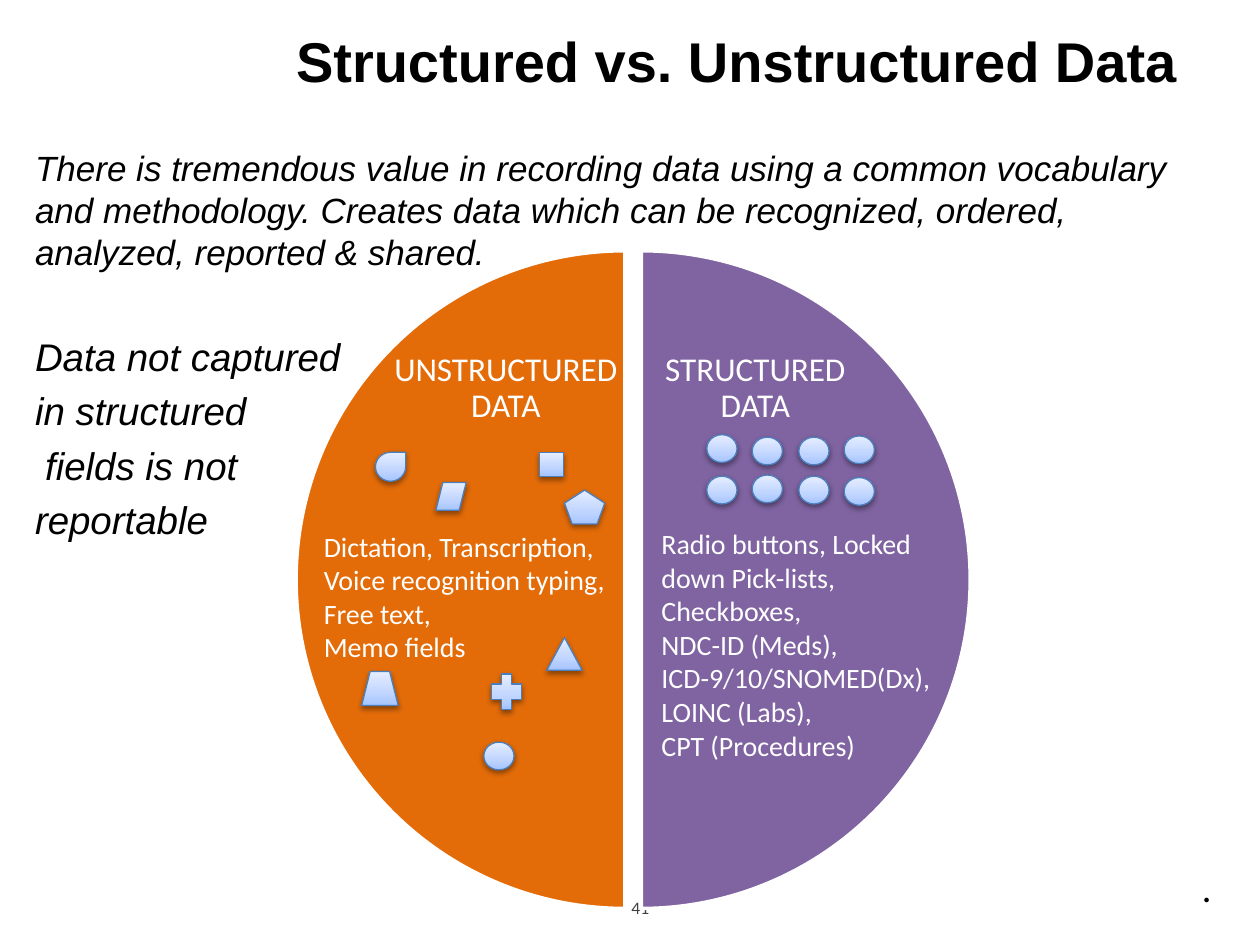
from copy import deepcopy

from lxml.etree import SubElement
from pptx import Presentation
from pptx.dml.color import RGBColor
from pptx.enum.shapes import MSO_SHAPE as Shape
from pptx.enum.text import MSO_ANCHOR as Anchor, PP_ALIGN as Align
from pptx.oxml.ns import qn
from pptx.util import Pt

PX = 9144  # 100 px to the inch
COLORS = {
    "black": "000000", "white": "FFFFFF", "number": "404040",
    "structured": "8064A2", "unstructured": "E36C09", "outline": "4B7EBC",
    "low": "A4C4FF", "middle": "BFD4FF", "high": "E6EEFF",
}


def rgb(name):
    return RGBColor.from_string(COLORS[name])


def write(text, at, holder=None, size=16, font="Calibri", color="white", bold=False,
          italic=False, align=Align.LEFT, anchor=Anchor.TOP, inset=(10, 5),
          spacing=None, before=0):
    """Put lines of text in a new box, or in the holder given, at (x, y, w, h) px."""
    left, top, width, height = (n * PX for n in at)
    if holder is None:
        holder = slide.shapes.add_textbox(left, top, width, height)
    holder.left, holder.top, holder.width, holder.height = left, top, width, height
    frame = holder.text_frame
    frame.word_wrap = True
    frame.vertical_anchor = anchor
    frame.margin_left = frame.margin_right = inset[0] * PX
    frame.margin_top = frame.margin_bottom = inset[1] * PX
    frame.text = text
    for index, paragraph in enumerate(frame.paragraphs):
        paragraph.alignment = align
        paragraph.line_spacing = spacing
        paragraph.space_before = Pt(before if index else 0)
        for run in paragraph.runs:
            run.font.size = Pt(size)
            run.font.name = font
            run.font.bold = bold
            run.font.italic = italic
            run.font.color.rgb = rgb(color)
    return frame


prs = Presentation()
prs.slide_width, prs.slide_height = 1000 * PX, 750 * PX
slide = prs.slides.add_slide(prs.slide_layouts[5])

write("Structured vs. Unstructured Data", (225, 13, 746, 70), slide.shapes.title,
      size=32, font="Arial", color="black", bold=True, anchor=Anchor.MIDDLE)

# Statements beside and above the circle
write("There is tremendous value in recording data using a common vocabulary and "
      "methodology. Creates data which can be recognized, ordered, analyzed, "
      "reported & shared.",
      (18, 111, 954, 110), size=20, font="Arial", color="black", italic=True,
      spacing=Pt(24))
warning = write("Data not captured\nin structured\nfields is not\nreportable",
                (18, 260, 300, 182), size=22, font="Arial", color="black",
                italic=True, spacing=Pt(26), before=5)
warning.paragraphs[2]._p.get_or_add_pPr().set("marL", str(8 * PX))
write(".", (900, 681, 72, 45), size=22, color="black", italic=True, align=Align.RIGHT)
write("41", (485, 712, 40, 17), size=10, color="number", align=Align.RIGHT,
      anchor=Anchor.MIDDLE)

# Two halves of the circle with their headings
halves = [
    ("STRUCTURED DATA", "structured", 248, (162, 54), 508),
    ("UNSTRUCTURED DATA", "unstructured", 235, (54, 162), 310),
]
for heading, color, left, angles, heading_left in halves:
    half = slide.shapes.add_shape(Shape.PIE, left * PX, 199 * PX, 522 * PX, 522 * PX)
    half.adjustments[0], half.adjustments[1] = angles
    half.shadow.inherit = False
    half.fill.solid()
    half.fill.fore_color.rgb = rgb(color)
    half.line.color.rgb = rgb("white")
    half.line.width = Pt(2)
    write(heading, (heading_left, 277, 183, 366), size=19, align=Align.CENTER,
          inset=(0, 3), spacing=0.9)

write("Radio buttons, Locked down Pick-lists, Checkboxes,\nNDC-ID (Meds),\n"
      "ICD-9/10/SNOMED(Dx), LOINC (Labs),\nCPT (Procedures)",
      (525, 413, 233, 226), inset=(0, 5))
write("Dictation, Transcription,\nVoice recognition typing, Free text,\nMemo fields",
      (257, 415, 234, 118), inset=(0, 5))

# Like symbols in rows for structured data, mixed ones for unstructured data
dot_columns = [(561, (345, 378)), (597, (347, 377)), (634, (347, 378)), (670, (346, 379))]
symbols = [(Shape.OVAL, x, y, 24, 22) for x, rows in dot_columns for y in rows]
symbols += [
    (Shape.OVAL, 384, 589, 24, 22),
    (Shape.RECTANGLE, 428, 359, 19, 19),
    (Shape.ISOSCELES_TRIANGLE, 434, 506, 28, 26),
    (Shape.TRAPEZOID, 287, 533, 29, 27),
    (Shape.REGULAR_PENTAGON, 448, 389, 32, 27),
    (Shape.PARALLELOGRAM, 346, 383, 24, 22),
    (Shape.TEAR, 298, 359, 24, 23),
    (Shape.CROSS, 390, 535, 24, 28),
]
for kind, *box in symbols:
    symbol = slide.shapes.add_shape(kind, *(n * PX for n in box))
    if kind == Shape.CROSS:
        symbol.adjustments[0] = 0.33
    symbol.line.color.rgb = rgb("outline")
    symbol.line.width = Pt(0.75)

    symbol.fill.gradient()
    symbol.fill.gradient_angle = 90
    stop_list = symbol._element.spPr.find(".//" + qn("a:gsLst"))
    stop_list.append(deepcopy(stop_list[-1]))
    shades = [(0, "low"), (0.35, "middle"), (1, "high")]
    for stop, (position, shade) in zip(symbol.fill.gradient_stops, shades):
        stop.position = position
        stop.color.rgb = rgb(shade)

    symbol.shadow.inherit = False
    effects = symbol._element.spPr.find(qn("a:effectLst"))
    shadow = SubElement(effects, qn("a:outerShdw"), blurRad=str(Pt(3.1)),
                        dist=str(Pt(1.6)), dir="5400000", rotWithShape="0")
    shadow_color = SubElement(shadow, qn("a:srgbClr"), val=COLORS["black"])
    SubElement(shadow_color, qn("a:alpha"), val="38000")

prs.save("out.pptx")
